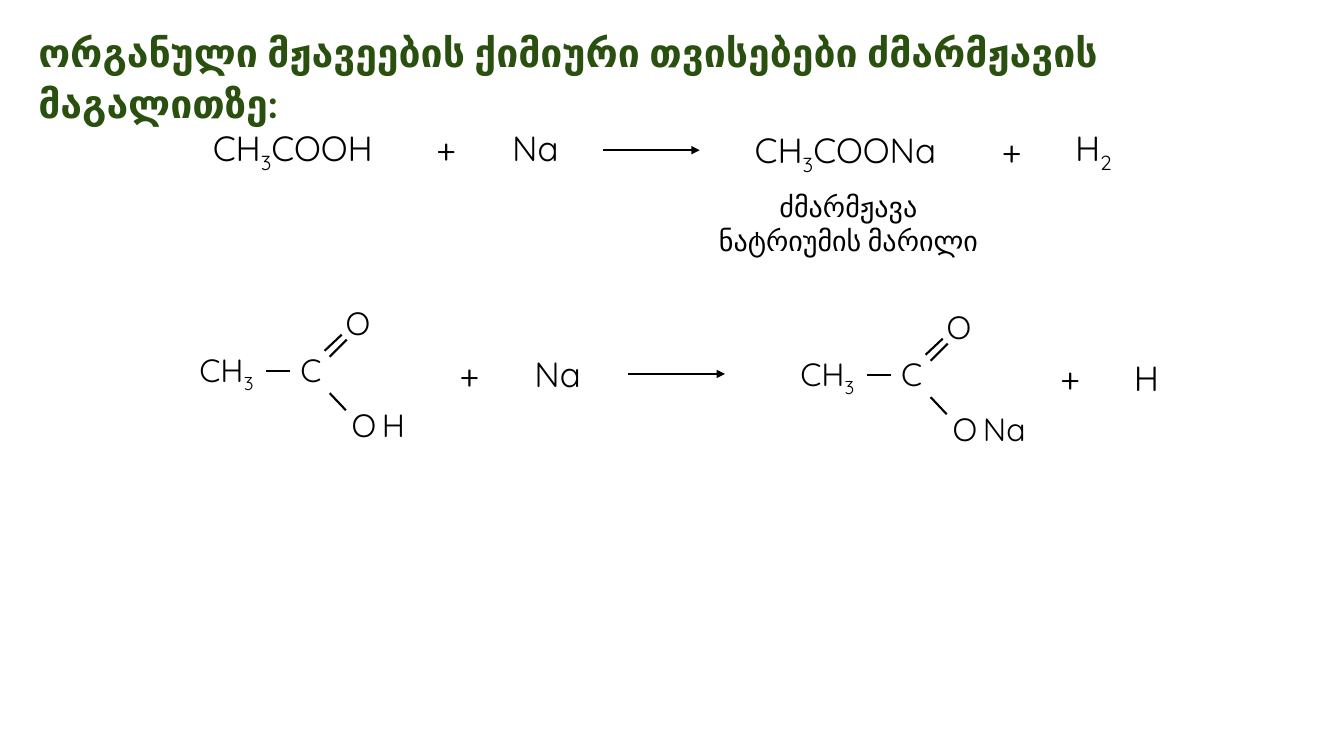
"""Build the slide on the chemical properties of acetic acid."""
from itertools import groupby

from lxml import etree
from pptx import Presentation
from pptx.dml.color import RGBColor
from pptx.enum.shapes import MSO_CONNECTOR
from pptx.enum.text import MSO_ANCHOR, MSO_AUTO_SIZE, PP_ALIGN
from pptx.oxml.ns import qn
from pptx.util import Inches, Pt

LEFT, MID = PP_ALIGN.LEFT, PP_ALIGN.CENTER
TOP, FIXED = MSO_ANCHOR.TOP, MSO_AUTO_SIZE.NONE
LINE = MSO_CONNECTOR.STRAIGHT
BLACK = RGBColor.from_string("000000")
GREEN = RGBColor.from_string("2A5010")
THEME = {
    "title": {"name": "Lato", "size": Pt(28), "bold": True, "color": GREEN},
    "term": {"name": "Quicksand", "size": Pt(25), "color": BLACK},
    "atom": {"name": "Quicksand", "size": Pt(23), "color": BLACK},
    "note": {"name": "Karla", "size": Pt(20), "color": BLACK},
    "bond": Pt(1.5),
    "arrow": Pt(1),
}


def write(shape, box, text, style, align=MID, wrap=False):
    for name, value in zip(("left", "top", "width", "height"), box):
        setattr(shape, name, Inches(value))
    frame = shape.text_frame
    form = {"word_wrap": wrap, "vertical_anchor": TOP, "auto_size": FIXED}
    for name, value in form.items():
        setattr(frame, name, value)
    para = frame.paragraphs[0]
    para.alignment = align
    for low, part in groupby(text, str.isdigit):
        run = para.add_run()
        run.text = "".join(part)
        for name, value in THEME[style].items():
            if name == "color":
                run.font.color.rgb = value
            else:
                setattr(run.font, name, value)
        if low:
            run._r.get_or_add_rPr().set("baseline", "-25000")
    return para


def draw(start, end, style):
    line = slide.shapes.add_connector(LINE, *map(Inches, start + end))
    line.line.color.rgb = BLACK
    line.line.width = THEME[style]
    if style == "arrow":
        tail = etree.SubElement(line.line._get_or_add_ln(), qn("a:tailEnd"))
        tail.set("type", "triangle")
    etree.SubElement(line._element.spPr, qn("a:effectLst"))


deck = Presentation()
deck.slide_width, deck.slide_height = Inches(13.33), Inches(7.5)
slide = deck.slides.add_slide(deck.slide_layouts[5])

head = write(slide.shapes.title, (0.28, 0.2, 12.59, 0.61),
             "ორგანული მჟავეების ქიმიური თვისებები ძმარმჟავის მაგალითზე:",
             "title", LEFT, True)
head.line_spacing, head.space_after = 1.07, Pt(8)

TERMS = [
    (1.91, 1.21, 1.99, "CH3COOH"), (4.22, 1.21, 0.41, "+"),
    (4.96, 1.21, 0.7, "Na"), (7.26, 1.23, 2.25, "CH3COONa"),
    (9.83, 1.23, 0.41, "+"), (10.56, 1.21, 0.57, "H2"),
    (4.45, 3.45, 0.41, "+"), (5.18, 3.45, 0.7, "Na"),
    (10.41, 3.48, 0.41, "+"), (11.15, 3.49, 0.44, "H"),
]
for x, y, wide, text in TERMS:
    write(slide.shapes.add_textbox(0, 0, 0, 0), (x, y, wide, 0.52), text, "term")

for x, y in ((5.98, 1.49), (6.23, 3.71)):
    draw((x, y), (x + 0.96, y), "arrow")

ATOMS = [(0, 0.47, 0.85, "CH3"), (1, 0.47, 0.46, "C"),
         (1.45, 0, 0.48, "O"), (1.51, 1.01, 0.7, "O")]
BONDS = [(1, 0.72, 0.76, 0.72), (1.39, 0.94, 1.55, 1.11),
         (1.39, 0.58, 1.56, 0.41), (1.34, 0.52, 1.51, 0.36)]
for left, top, end, wide in ((1.88, 2.96, "H", 0.42), (7.84, 3, "Na", 0.66)):
    for x, y, width, text in ATOMS + [(1.81, 1.01, wide, end)]:
        write(slide.shapes.add_textbox(0, 0, 0, 0),
              (left + x, top + y, width, 0.49), text, "atom", LEFT, True)
    for x, y, far, low in BONDS:
        draw((left + x, top + y), (left + far, top + low), "bond")

write(slide.shapes.add_textbox(0, 0, 0, 0), (7, 1.83, 2.83, 0.77),
      "ძმარმჟავა ნატრიუმის მარილი", "note", MID, True)

deck.save("out.pptx")
